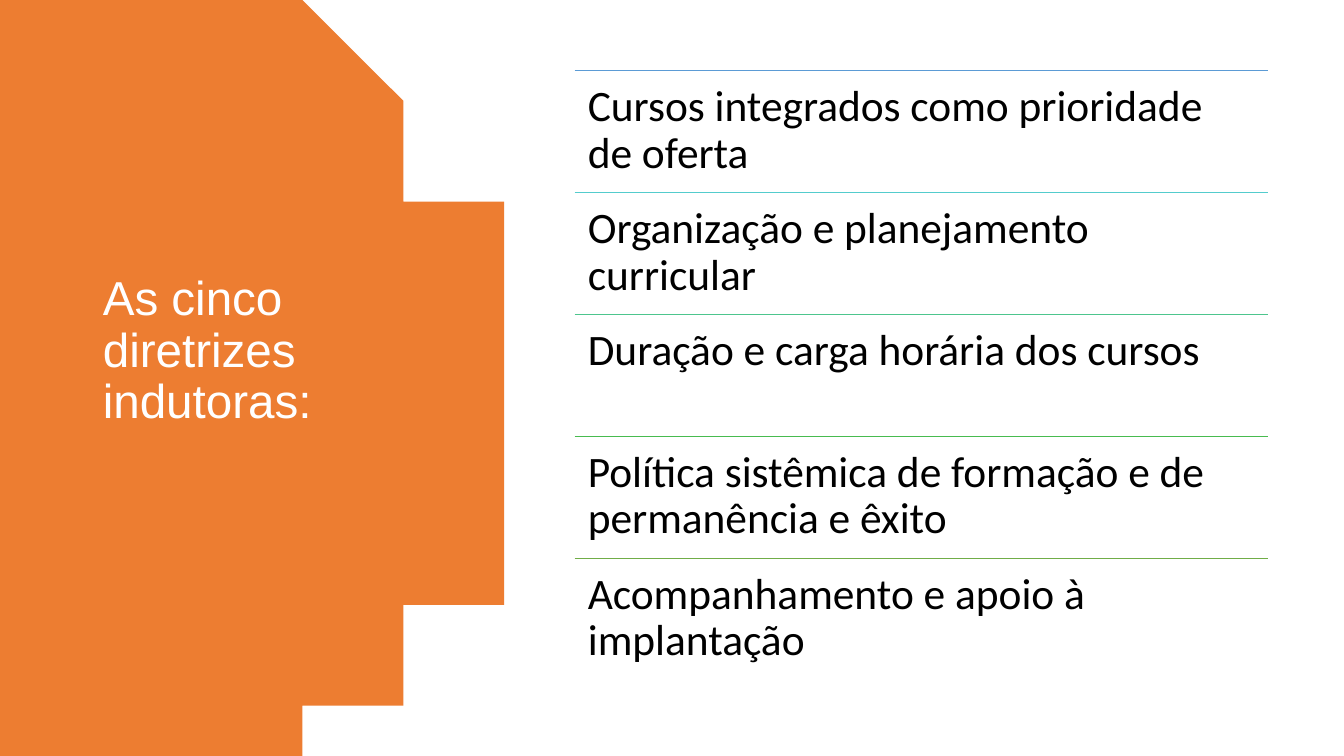
import math

from lxml import etree
from pptx import Presentation
from pptx import util as u
from pptx.dml.color import RGBColor
from pptx.enum import shapes, text
from pptx.oxml.ns import qn

ORANGE = RGBColor(0xED, 0x7D, 0x31)
WHITE = RGBColor(0xFF, 0xFF, 0xFF)
BLACK = RGBColor(0, 0, 0)

HEADING = "As cinco diretrizes indutoras:"
GUIDELINES = [
    ("Cursos integrados como prioridade de oferta", RGBColor(0x5B, 0x9B, 0xD5)),
    ("Organização e planejamento curricular", RGBColor(0x54, 0xCC, 0xCD)),
    ("Duração e carga horária dos cursos", RGBColor(0x4D, 0xC5, 0x8D)),
    ("Política sistêmica de formação e de permanência e êxito", RGBColor(0x48, 0xBB, 0x4F)),
    ("Acompanhamento e apoio à implantação", RGBColor(0x70, 0xAD, 0x47)),
]

# Inches
SLIDE_W, SLIDE_H = 13.33, 7.5
DISC_RIGHT, DISC_RADIUS = 4.93, 4.4
LIST_LEFT, LIST_TOP, LIST_W, ROW_H = 5.7, 0.7, 6.88, 1.21
ROW_INSET = 0.13
ARC_STEPS = 80


def style(paragraph, font_name, size, color):
    paragraph.alignment = text.PP_ALIGN.LEFT
    paragraph.line_spacing = 0.9
    paragraph.font.name = font_name
    paragraph.font.size = u.Pt(size)
    paragraph.font.color.rgb = color


def add_disc(slide):
    """Draw the part of the disc that lies between the slide's edges."""
    center_x, center_y = DISC_RIGHT - DISC_RADIUS, SLIDE_H / 2
    half_angle = math.asin(center_y / DISC_RADIUS)
    angles = [half_angle * (2 * step / ARC_STEPS - 1) for step in range(ARC_STEPS + 1)]
    arc = [(center_x + DISC_RADIUS * math.cos(a), center_y + DISC_RADIUS * math.sin(a))
           for a in angles]
    builder = slide.shapes.build_freeform(0, 0, scale=u.Inches(1))
    builder.add_line_segments(arc + [(0, SLIDE_H)], close=True)
    disc = builder.convert_to_shape()
    disc.shadow.inherit = False
    disc.fill.solid()
    disc.fill.fore_color.rgb = ORANGE
    disc.line.fill.background()


def add_heading(slide):
    heading = slide.shapes.title
    heading.left, heading.top = u.Inches(0.92), u.Inches(0.7)
    heading.width, heading.height = u.Inches(3.23), u.Inches(6.09)
    frame = heading.text_frame
    frame.text = HEADING
    frame.word_wrap = True
    frame.auto_size = text.MSO_AUTO_SIZE.NONE
    frame.vertical_anchor = text.MSO_ANCHOR.MIDDLE
    frame.margin_bottom = u.Inches(0.56)  # lifts the text by half a line
    style(frame.paragraphs[0], "Arial", 34, WHITE)
    # Bring the heading in front of the disc
    slide.shapes._spTree.append(heading._element)


def add_guideline(group, row, guideline, color):
    left, width = u.Inches(LIST_LEFT), u.Inches(LIST_W)
    top = u.Inches(LIST_TOP + row * ROW_H)
    rule = group.shapes.add_connector(
        shapes.MSO_CONNECTOR.STRAIGHT, left, top, left + width, top)
    rule.line.color.rgb = color
    rule.line.width = u.Pt(1)
    etree.SubElement(rule._element.spPr, qn("a:effectLst"))

    label = group.shapes.add_textbox(left, top, width, u.Inches(ROW_H))
    frame = label.text_frame
    frame.word_wrap = True
    frame.margin_left = frame.margin_right = u.Inches(ROW_INSET)
    frame.margin_top = frame.margin_bottom = u.Inches(ROW_INSET)
    frame.text = guideline
    style(frame.paragraphs[0], "Calibri", 31, BLACK)


def main():
    prs = Presentation()
    prs.slide_width, prs.slide_height = u.Inches(SLIDE_W), u.Inches(SLIDE_H)
    slide = prs.slides.add_slide(prs.slide_layouts.get_by_name("Title Only"))
    add_disc(slide)
    add_heading(slide)
    group = slide.shapes.add_group_shape()
    for row, (guideline, color) in enumerate(GUIDELINES):
        add_guideline(group, row, guideline, color)
    prs.save("out.pptx")


if __name__ == "__main__":
    main()
